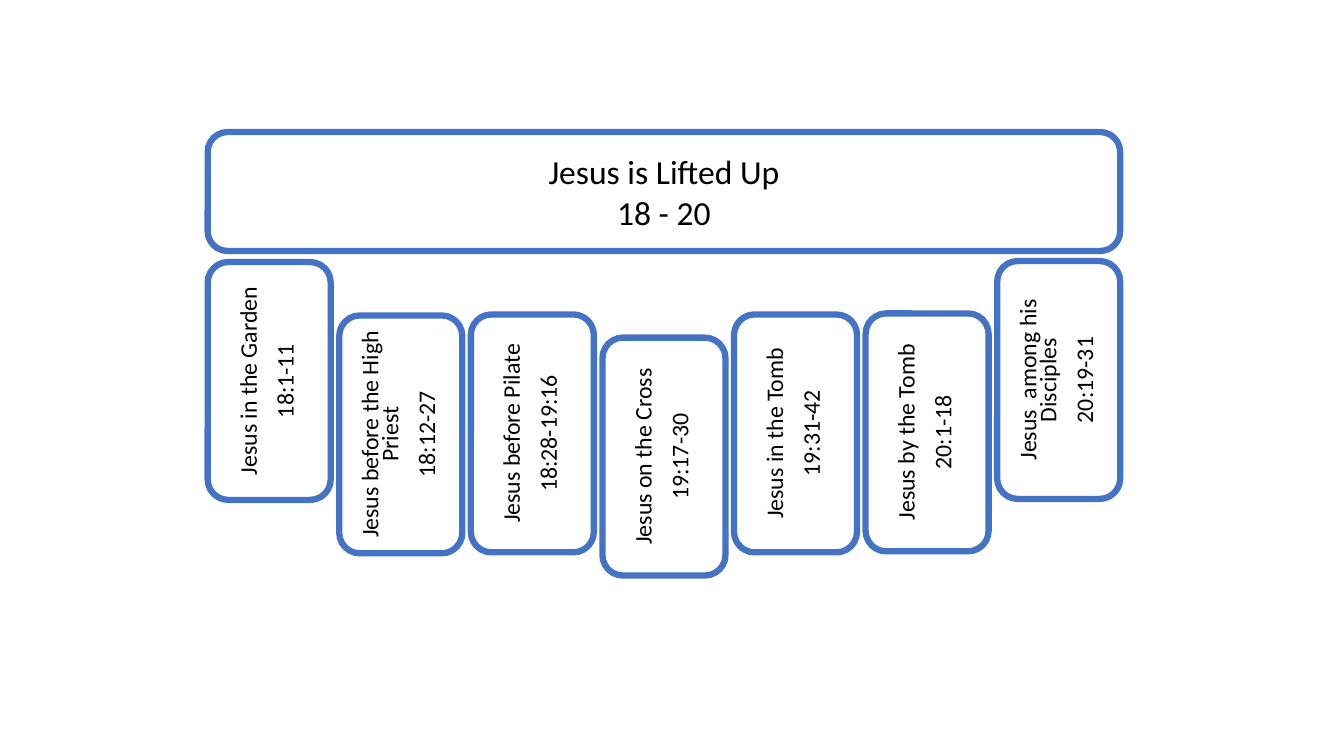
from pptx import Presentation
from pptx.dml.color import RGBColor
from pptx.enum.shapes import MSO_SHAPE
from pptx.enum.text import MSO_ANCHOR, PP_ALIGN
from pptx.util import Inches, Pt

COLORS = {"border": "4472C4", "text": "000000"}
FONT = "Calibri"
LEFT = 2.06
CARD_PITCH = 1.305

SECTIONS = [
    ("Jesus in the Garden", "18:1-11", 2.6),
    ("Jesus before the High Priest", "18:12-27", 3.13),
    ("Jesus before Pilate", "18:28-19:16", 3.12),
    ("Jesus on the Cross", "19:17-30", 3.35),
    ("Jesus in the Tomb", "19:31-42", 3.12),
    ("Jesus by the Tomb", "20:1-18", 3.11),
    ("Jesus  among his Disciples", "20:19-31", 2.59),
]


def add_box(slide, left, top, width, height, lines, size):
    shape = slide.shapes.add_shape(
        MSO_SHAPE.ROUNDED_RECTANGLE,
        Inches(left), Inches(top), Inches(width), Inches(height),
    )
    shape.shadow.inherit = False
    shape.fill.background()
    shape.line.color.rgb = RGBColor.from_string(COLORS["border"])
    shape.line.width = Pt(4.5)
    text_frame = shape.text_frame
    text_frame.word_wrap = True
    text_frame.vertical_anchor = MSO_ANCHOR.MIDDLE
    text_frame.margin_left = text_frame.margin_right = Inches(0.04)
    text_frame.margin_top = text_frame.margin_bottom = Inches(0.04)
    text_frame.text = "\n".join(lines)
    for paragraph in text_frame.paragraphs:
        paragraph.alignment = PP_ALIGN.CENTER
        for run in paragraph.runs:
            run.font.name = FONT
            run.font.size = Pt(size)
            run.font.color.rgb = RGBColor.from_string(COLORS["text"])
    return shape


def add_section_card(slide, index, title, verses, top):
    left = LEFT + index * CARD_PITCH
    card = add_box(slide, left, top, 1.22, 2.36, [title, verses], 17)
    card.text_frame._txBody.bodyPr.set("vert", "vert270")
    for paragraph in card.text_frame.paragraphs:
        paragraph.line_spacing = 0.7
        paragraph.space_after = Pt(12)


def main():
    presentation = Presentation()
    presentation.slide_width = Inches(13.33)
    presentation.slide_height = Inches(7.5)
    slide = presentation.slides.add_slide(presentation.slide_layouts[6])
    add_box(slide, LEFT, 1.31, 9.05, 1.18, ["Jesus is Lifted Up", "18 - 20"], 24)
    for index, (title, verses, top) in enumerate(SECTIONS):
        add_section_card(slide, index, title, verses, top)
    presentation.save("out.pptx")


if __name__ == "__main__":
    main()
